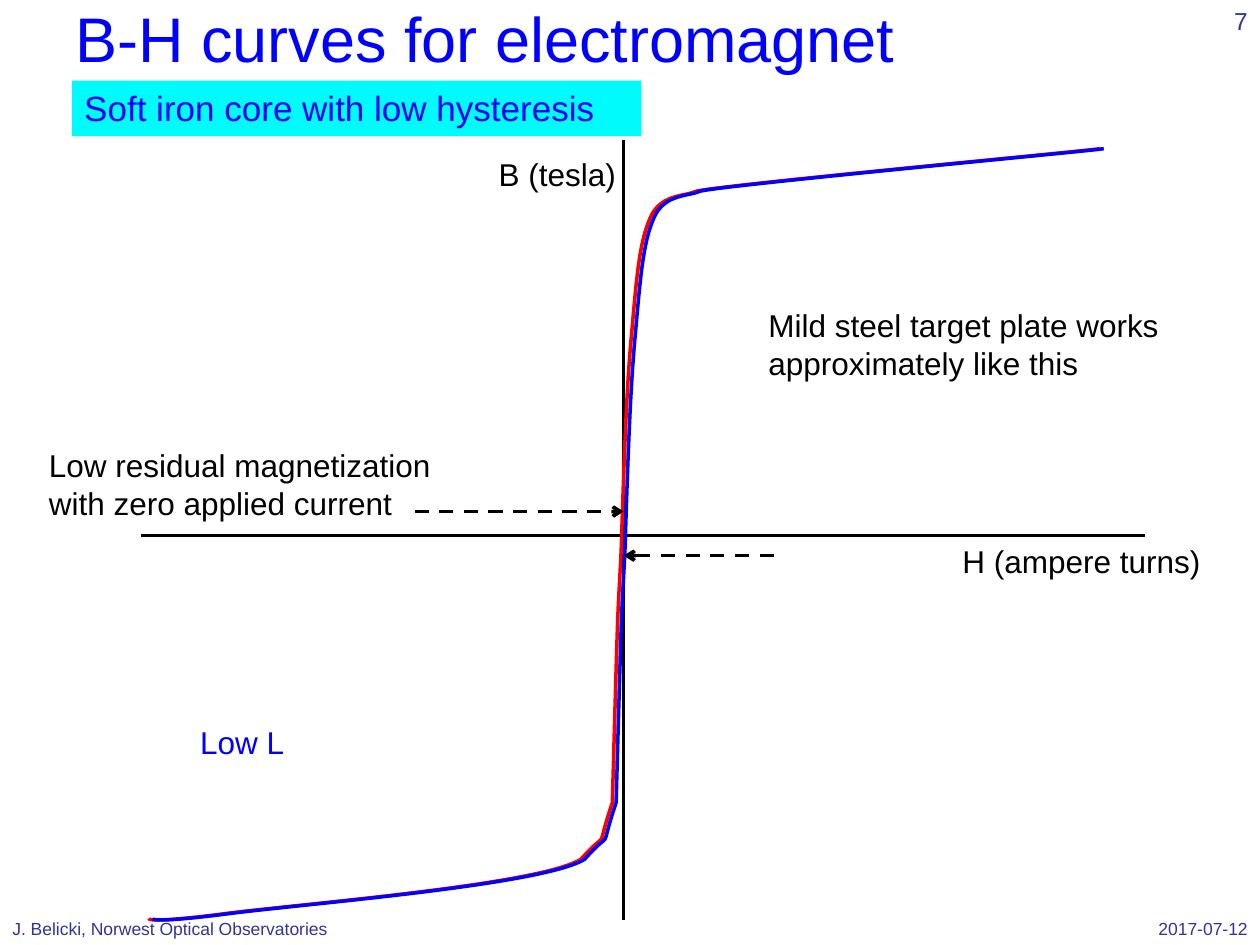
"""Build a slide with the B-H curves of a soft iron electromagnet."""
from lxml.etree import SubElement
from pptx import Presentation
from pptx.dml.color import RGBColor
from pptx.enum.dml import MSO_LINE
from pptx.enum.shapes import MSO_CONNECTOR, MSO_SHAPE
from pptx.enum.text import MSO_ANCHOR, PP_ALIGN
from pptx.oxml.ns import qn
from pptx.util import Inches, Pt

BLACK = RGBColor(0x00, 0x00, 0x00)
BLUE = RGBColor(0x00, 0x00, 0xFF)
RED = RGBColor(0xFF, 0x00, 0x00)
CYAN = RGBColor(0x00, 0xFB, 0xFC)
NAVY = RGBColor(0x33, 0x33, 0x99)
LEFT, RIGHT = PP_ALIGN.LEFT, PP_ALIGN.RIGHT
TOP, MIDDLE = MSO_ANCHOR.TOP, MSO_ANCHOR.MIDDLE

deck = Presentation()
deck.slide_width, deck.slide_height = Inches(10), Inches(7.5)
shapes = deck.slides.add_slide(deck.slide_layouts[6]).shapes


def write(shape, text, size, color, align=LEFT, anchor=TOP):
    frame = shape.text_frame
    frame.word_wrap = True
    frame.vertical_anchor = anchor
    para = frame.paragraphs[0]
    para.alignment = align
    run = para.add_run()
    run.text = text
    run.font.name = "Arial"
    run.font.size = Pt(size)
    run.font.color.rgb = color


def draw(start, end, arrow=False):
    line = shapes.add_connector(MSO_CONNECTOR.STRAIGHT, *map(Inches, start + end))
    line.line.color.rgb = BLACK
    line.line.width = Pt(2)
    if arrow:
        line.line.dash_style = MSO_LINE.DASH
        SubElement(line.line._get_or_add_ln(), qn("a:tailEnd"), type="arrow")
    SubElement(line._element.spPr, qn("a:effectLst"))


draw((1.12, 4.25), (9.09, 4.25))
draw((4.95, 7.3), (4.95, 1.11))

points = [
    (8.73, 1.18),
    (8.71, 1.19), (5.6, 1.48), (5.52, 1.52),
    (5.43, 1.56), (5.24, 1.54), (5.16, 1.73),
    (5.07, 1.93), (5.05, 2.24), (5.01, 2.68),
    (4.97, 3.11), (4.95, 3.75), (4.93, 4.37),
    (4.9, 4.98), (4.91, 4.57), (4.86, 6.37),
    (4.71, 6.82), (4.86, 6.54), (4.61, 6.82),
    (4.27, 7.03), (2.29, 7.18), (1.72, 7.26),
    (1.15, 7.33), (1.18, 7.29), (1.18, 7.29),
]
for shift, color in ((0, RED), (0.03, BLUE)):
    track = [(Inches(x + shift), Inches(y)) for x, y in points]
    pen = shapes.build_freeform(*track[0])
    pen.add_line_segments(track[1:], close=False)
    curve = pen.convert_to_shape()
    legs = list(curve._element.iter(qn("a:lnTo")))
    for first in range(0, len(legs), 3):
        bend = SubElement(legs[first].getparent(), qn("a:cubicBezTo"))
        for leg in legs[first:first + 3]:
            bend.append(leg[0])
            leg.getparent().remove(leg)
    curve.shadow.inherit = False
    curve.fill.background()
    curve.line.color.rgb = color
    curve.line.width = Pt(2)

banner = shapes.add_shape(MSO_SHAPE.RECTANGLE, *map(Inches, (0.57, 0.64, 4.52, 0.44)))
banner.shadow.inherit = False
banner.fill.solid()
banner.fill.fore_color.rgb = CYAN
banner.line.fill.background()
write(banner, "Soft iron core with low hysteresis", 20, BLUE)

labels = [
    ((0.5, -0.11, 9, 0.81), "B-H curves for electromagnet", 36, BLUE, LEFT, MIDDLE),
    ((7.77, 7.24, 2.23, 0.25), "2017-07-12", 10, NAVY, RIGHT, TOP),
    ((0, 7.24, 3.17, 0.25), "J. Belicki, Norwest Optical Observatories", 10, NAVY, LEFT, TOP),
    ((7.92, 0, 2.08, 0.42), "7", 14, NAVY, RIGHT, TOP),
    ((7.54, 4.25, 2.46, 0.4), "H (ampere turns)", 18, BLACK, LEFT, TOP),
    ((1.49, 5.69, 1.48, 0.4), "Low L", 18, BLUE, LEFT, TOP),
    ((0.29, 3.49, 3.46, 0.71), "Low residual magnetization with zero applied current",
     18, BLACK, LEFT, TOP),
    ((3.86, 1.18, 2.08, 0.4), "B (tesla)", 18, BLACK, LEFT, TOP),
    ((6, 2.38, 3.42, 0.71), "Mild steel target plate works approximately like this",
     18, BLACK, LEFT, TOP),
]
for box, *style in labels:
    write(shapes.add_textbox(*map(Inches, box)), *style)

draw((3.29, 4.06), (4.95, 4.06), arrow=True)
draw((6.14, 4.41), (4.95, 4.41), arrow=True)

deck.save("out.pptx")
